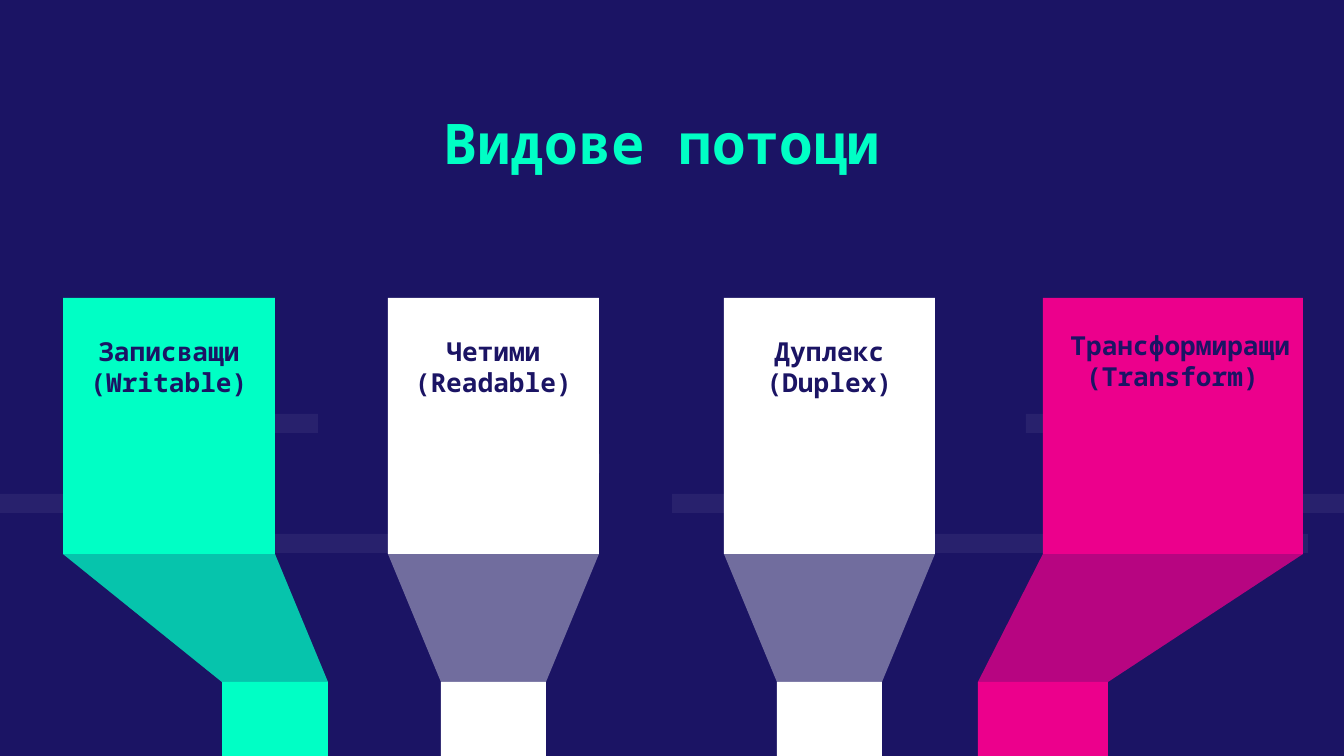
from pptx import Presentation
from pptx.dml.color import RGBColor
from pptx.enum.shapes import MSO_SHAPE
from pptx.enum.text import MSO_ANCHOR, MSO_AUTO_SIZE, PP_ALIGN
from pptx.oxml.ns import qn
from pptx.util import Pt
from lxml import etree

RECTANGLE = MSO_SHAPE.RECTANGLE
TOP, MIDDLE, BOTTOM = MSO_ANCHOR.TOP, MSO_ANCHOR.MIDDLE, MSO_ANCHOR.BOTTOM
CENTER = PP_ALIGN.CENTER
NO_AUTOFIT = MSO_AUTO_SIZE.NONE

NAVY = RGBColor(0x1B, 0x14, 0x64)
MINT = RGBColor(0x00, 0xFF, 0xC5)
PINK = RGBColor(0xEC, 0x00, 0x8C)
WHITE = RGBColor(0xFF, 0xFF, 0xFF)

FONT = "Noto Sans Mono"
PAGE_WIDTH, PAGE_HEIGHT = 1344, 756
SCALE = 9144000 / PAGE_WIDTH
INSET = 13
BLOCK_HEIGHT, FUNNEL_HEIGHT = 256, 128

BAR_HEIGHT = 19
BAR_ROWS = {
    414: [(121, 197), (1026, 169)],
    454: [(547, 53)],
    494: [(0, 199), (672, 199), (1145, 199)],
    534: [(169, 298), (841, 433), (1287, 21)],
}

STREAMS = [
    ((63, 298, 212, 458), 222, MINT, [(MINT, 100), (NAVY, 25)],
     "Записващи (Writable)", (0, 37, 212, 63), BOTTOM),
    ((388, 298, 211, 458), 441, WHITE, [(WHITE, 38)],
     "Четими (Readable)", (0, 37, 211, 63), BOTTOM),
    ((724, 298, 211, 458), 777, WHITE, [(WHITE, 38)],
     "Дуплекс (Duplex)", (0, 37, 211, 63), BOTTOM),
    ((1043, 298, 260, 458), 978, PINK, [(PINK, 100), (NAVY, 25)],
     "Трансформиращи\n(Transform) ", (0, 25, 275, 62), MIDDLE),
]


def px(value):
    return round(value * SCALE)


def paint(shape, color, opacity=100):
    shape.shadow.inherit = False
    shape.line.fill.background()
    shape.fill.solid()
    shape.fill.fore_color.rgb = color
    if opacity < 100:
        tint = shape.fill._xPr.find(qn("a:solidFill"))[0]
        etree.SubElement(tint, qn("a:alpha"), val=str(opacity * 1000))


def add_rectangle(shapes, box, color, opacity=100):
    paint(shapes.add_shape(RECTANGLE, *map(px, box)), color, opacity)


def write(shape, box, text, size, color, anchor, bottom_inset):
    shape.left, shape.top, shape.width, shape.height = map(px, box)
    frame = shape.text_frame
    frame.text = text
    frame.word_wrap = True
    frame.auto_size = NO_AUTOFIT
    frame.vertical_anchor = anchor
    frame.margin_left = frame.margin_right = frame.margin_top = px(INSET)
    frame.margin_bottom = px(bottom_inset)
    for para in frame.paragraphs:
        para.alignment = CENTER
        for span in para.runs:
            span.font.name = FONT
            span.font.size = Pt(size)
            span.font.bold = True
            span.font.color.rgb = color


def add_bars(page, box):
    left, top = box[:2]
    shapes = page.shapes.add_group_shape().shapes
    for row, bars in BAR_ROWS.items():
        for offset, width in bars:
            add_rectangle(shapes, (left + offset, top + row, width, BAR_HEIGHT), WHITE, 6)


def add_stream(page, box, neck_left, color, layers, label, label_box, anchor):
    left, top, width, height = box
    neck_width = width // 2
    funnel_top = top + BLOCK_HEIGHT
    neck_top = funnel_top + FUNNEL_HEIGHT
    shapes = page.shapes.add_group_shape().shapes
    for layer_color, opacity in layers:
        outline = shapes.build_freeform(left, funnel_top, scale=SCALE)
        outline.add_line_segments([
            (left + width, funnel_top),
            (neck_left + neck_width, neck_top),
            (neck_left, neck_top),
        ], close=True)
        paint(outline.convert_to_shape(), layer_color, opacity)
    add_rectangle(shapes, (neck_left, neck_top, neck_width, top + height - neck_top), color)
    add_rectangle(shapes, (left, top, width, BLOCK_HEIGHT), color)
    dx, dy, label_width, label_height = label_box
    caption = page.shapes.add_textbox(0, 0, 0, 0)
    write(caption, (left + dx, top + dy, label_width, label_height),
          label, 14, NAVY, anchor, 0)


def main():
    deck = Presentation()
    deck.slide_width, deck.slide_height = px(PAGE_WIDTH), px(PAGE_HEIGHT)
    page = deck.slides.add_slide(deck.slide_layouts[5])
    page.background.fill.solid()
    page.background.fill.fore_color.rgb = NAVY
    add_bars(page, (0, 0, PAGE_WIDTH, PAGE_HEIGHT))
    write(page.shapes.title, (178, 96, 968, 98), "Видове потоци", 30, MINT, TOP, INSET)
    for stream in STREAMS:
        add_stream(page, *stream)
    deck.save("out.pptx")


if __name__ == "__main__":
    main()
